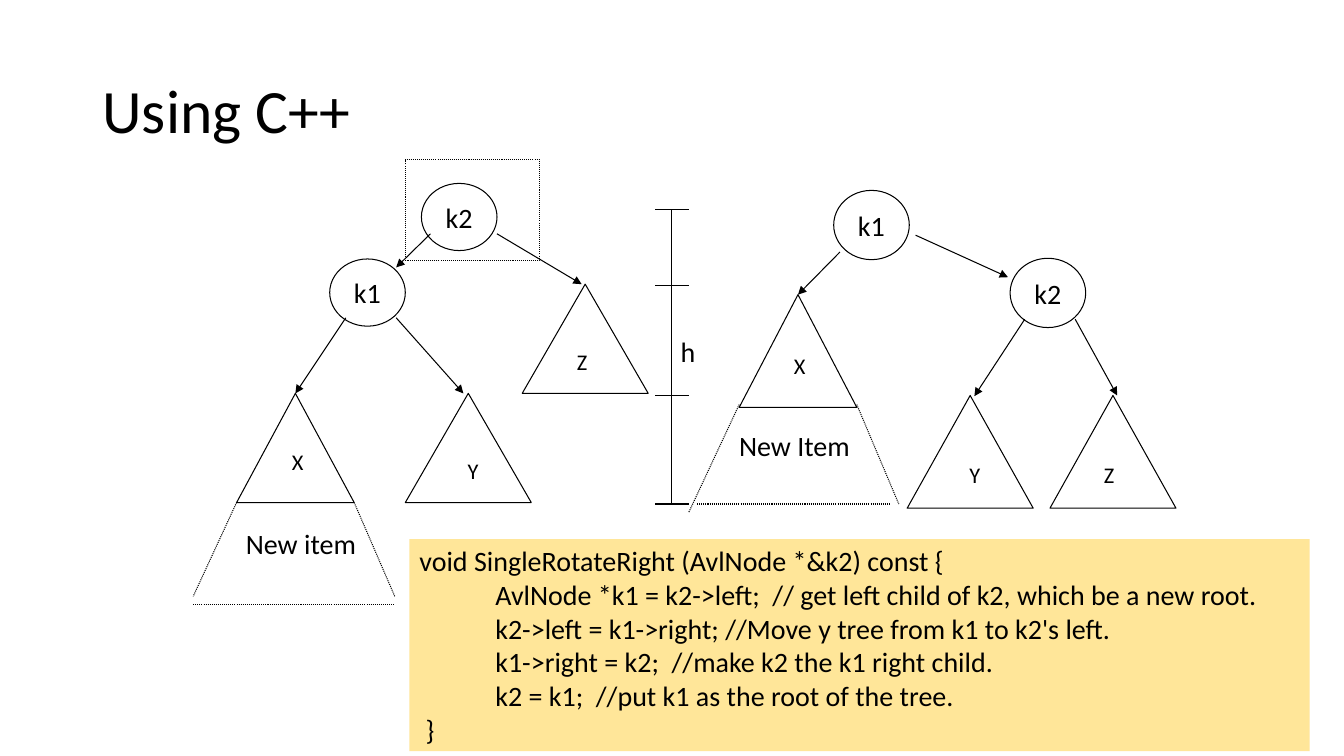
from dataclasses import dataclass

from lxml.etree import SubElement
from pptx import Presentation
from pptx.dml.color import RGBColor
from pptx.enum.dml import MSO_LINE_DASH_STYLE as Dash
from pptx.enum.shapes import MSO_CONNECTOR as Connector, MSO_SHAPE as Preset
from pptx.enum.text import MSO_ANCHOR as Anchor, PP_ALIGN as Align
from pptx.oxml.ns import qn
from pptx.util import Pt


@dataclass(frozen=True)
class Theme:
    font: str = "Calibri"
    ink: RGBColor = RGBColor(0x00, 0x00, 0x00)
    code_fill: RGBColor = RGBColor(0xFF, 0xE6, 0x99)
    title_size: int = 44
    text_size: int = 20
    letter_size: int = 16
    line_width: float = 0.75


THEME = Theme()

CODE = [
    "void SingleRotateRight (AvlNode *&k2) const {",
    "            AvlNode *k1 = k2->left;  // get left child of k2, which be a new root.",
    "            k2->left = k1->right; //Move y tree from k1 to k2's left.",
    "            k1->right = k2;  //make k2 the k1 right child.",
    "            k2 = k1;  //put k1 as the root of the tree.",
    " }",
]


def write(paragraph, text, size, align):
    paragraph.alignment = align
    run = paragraph.add_run()
    run.text = text
    run.font.name = THEME.font
    run.font.size = Pt(size)
    run.font.color.rgb = THEME.ink


def draw_line(line, dotted=False):
    line.color.rgb = THEME.ink
    line.width = Pt(THEME.line_width)
    if dotted:
        line.dash_style = Dash.ROUND_DOT


def add_outline(slide, preset, left, top, width, height, dotted=False):
    shape = slide.shapes.add_shape(preset, Pt(left), Pt(top), Pt(width), Pt(height))
    shape.shadow.inherit = False
    shape.fill.background()
    draw_line(shape.line, dotted)
    return shape


def add_node(slide, name, left, top, height):
    node = add_outline(slide, Preset.OVAL, left, top, 54, height)
    frame = node.text_frame
    frame.margin_left = frame.margin_right = frame.margin_top = frame.margin_bottom = 0
    frame.vertical_anchor = Anchor.MIDDLE
    frame.word_wrap = False
    write(frame.paragraphs[0], name, THEME.text_size, Align.CENTER)


def add_subtree(slide, left, top, width, height):
    return add_outline(slide, Preset.FLOWCHART_EXTRACT, left, top, width, height)


def add_label(slide, text, center_x, center_y, size=THEME.text_size):
    width, height = (len(text) + 1) * size * 0.6, size * 1.2 + 7.2
    box = slide.shapes.add_textbox(
        Pt(center_x - width / 2), Pt(center_y - height / 2), Pt(width), Pt(height))
    box.text_frame.word_wrap = False
    write(box.text_frame.paragraphs[0], text, size, Align.CENTER)


def add_line(slide, x1, y1, x2, y2, dotted=False, arrow=False):
    connector = slide.shapes.add_connector(
        Connector.STRAIGHT, Pt(x1), Pt(y1), Pt(x2), Pt(y2))
    draw_line(connector.line, dotted)
    properties = connector._element.spPr
    if arrow:
        SubElement(properties.find(qn("a:ln")), qn("a:tailEnd"), type="triangle")
    SubElement(properties, qn("a:effectLst"))
    return connector


def add_tree(slide, nodes, node_height, subtrees, subtree_height, arrows, new_item):
    for name, left, top in nodes:
        add_node(slide, name, left, top, node_height)
    triangles = {}
    for name, left, top, width, label_x, label_y in subtrees:
        triangles[name] = add_subtree(slide, left, top, width, subtree_height)
        add_label(slide, name, label_x, label_y, THEME.letter_size)
    for *ends, target in arrows:
        connector = add_line(slide, *ends, arrow=True)
        if target:
            connector.end_connect(triangles[target], 0)
    # Dotted extension below subtree X
    text, label_x, label_y, edges = new_item
    for edge in edges:
        add_line(slide, *edge, dotted=True)
    add_label(slide, text, label_x, label_y)


def add_height_scale(slide):
    axis, half_tick, levels = 480, 12, (150, 204, 282.5, 360)
    add_line(slide, axis, levels[0], axis, levels[-1])
    for level in levels:
        add_line(slide, axis - half_tick, level, axis + half_tick, level)
    add_label(slide, "h", 491, 251)


def add_title(slide, text):
    title = slide.shapes.title
    title.left, title.top, title.width, title.height = Pt(66), Pt(29), Pt(828), Pt(104)
    title.text_frame.vertical_anchor = Anchor.MIDDLE
    paragraph = title.text_frame.paragraphs[0]
    paragraph.line_spacing = 0.9
    write(paragraph, text, THEME.title_size, Align.LEFT)


def add_code(slide):
    box = slide.shapes.add_shape(Preset.RECTANGLE, Pt(292.5), Pt(385), Pt(643), Pt(151.5))
    box.shadow.inherit = False
    box.fill.solid()
    box.fill.fore_color.rgb = THEME.code_fill
    box.line.fill.background()
    frame = box.text_frame
    frame.word_wrap = True
    frame.vertical_anchor = Anchor.TOP
    for index, code_line in enumerate(CODE):
        paragraph = frame.add_paragraph() if index else frame.paragraphs[0]
        write(paragraph, code_line, THEME.text_size, Align.LEFT)


def main():
    presentation = Presentation()
    presentation.slide_width, presentation.slide_height = Pt(960), Pt(540)
    slide = presentation.slides.add_slide(presentation.slide_layouts[5])
    add_title(slide, "Using C++")

    # Tree before the rotation
    add_tree(
        slide,
        nodes=[("k2", 301, 131), ("k1", 235.5, 185)], node_height=48,
        subtrees=[("X", 169, 281, 84, 211, 330),
                  ("Y", 289.5, 281, 90, 336.5, 336),
                  ("Z", 373, 203, 90, 414.5, 258)], subtree_height=78,
        arrows=[(307.5, 167, 283, 191, None), (355, 167, 415.5, 203, None),
                (247, 227, 211, 281, "X"), (283, 227, 331, 281, None)],
        new_item=("New item", 215, 388, [(169, 359, 138, 426), (253, 359, 282, 426),
                                         (138, 432, 282, 432)]))
    add_outline(slide, Preset.RECTANGLE, 289.5, 114, 96, 72, dotted=True)

    add_height_scale(slide)

    # Tree after the rotation
    add_tree(
        slide,
        nodes=[("k1", 595.5, 136), ("k2", 721.5, 184.5)], node_height=49.5,
        subtrees=[("X", 528, 210.5, 84, 569.5, 261),
                  ("Y", 648, 282.5, 90, 695, 339),
                  ("Z", 750, 282.5, 90, 791, 339)], subtree_height=80.5,
        arrows=[(600, 180, 570, 210.5, "X"), (654, 168, 720, 198, None),
                (732, 228, 696, 283, None), (768, 228, 798, 282.5, None)],
        new_item=("New Item", 567.5, 318, [(528, 289, 492, 366), (612, 289, 642, 360),
                                           (498, 360, 636, 360)]))

    add_code(slide)
    presentation.save("out.pptx")


if __name__ == "__main__":
    main()
